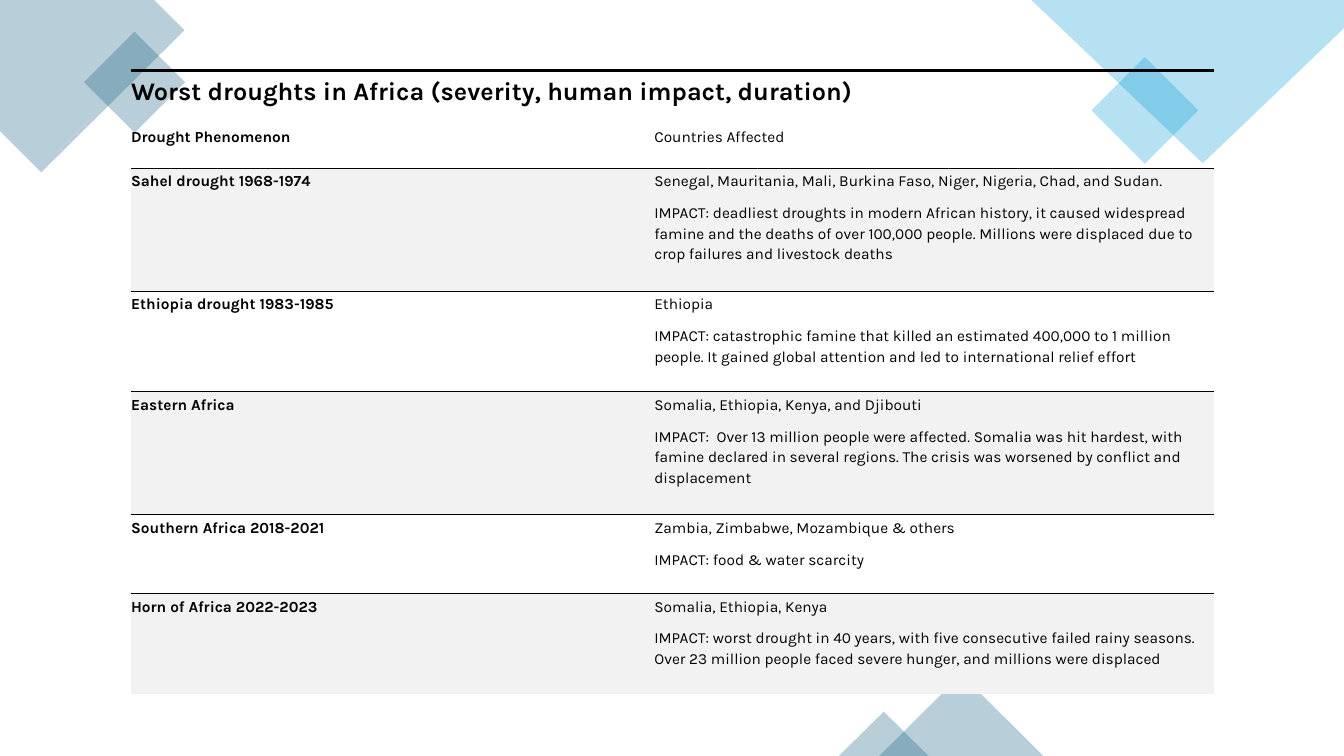
from lxml import etree
from pptx import Presentation
from pptx.dml.color import RGBColor
from pptx.enum.shapes import MSO_SHAPE
from pptx.oxml.ns import qn
from pptx.util import Inches, Pt

# Content
TITLE = "Worst droughts in Africa (severity, human impact, duration)"
HEADINGS = ("Drought Phenomenon", "Countries Affected")
DROUGHTS = [
    ("Sahel drought 1968-1974",
     "Senegal, Mauritania, Mali, Burkina Faso, Niger, Nigeria, Chad, and Sudan.",
     "IMPACT: deadliest droughts in modern African history, it caused widespread famine "
     "and the deaths of over 100,000 people. Millions were displaced due to crop failures "
     "and livestock deaths"),
    ("Ethiopia drought 1983-1985",
     "Ethiopia",
     "IMPACT: catastrophic famine that killed an estimated 400,000 to 1 million people. "
     "It gained global attention and led to international relief effort"),
    ("Eastern Africa",
     "Somalia, Ethiopia, Kenya, and Djibouti",
     "IMPACT:  Over 13 million people were affected. Somalia was hit hardest, with famine "
     "declared in several regions. The crisis was worsened by conflict and displacement"),
    ("Southern Africa 2018-2021",
     "Zambia, Zimbabwe, Mozambique & others",
     "IMPACT: food & water scarcity"),
    ("Horn of Africa 2022-2023",
     "Somalia, Ethiopia, Kenya",
     "IMPACT: worst drought in 40 years, with five consecutive failed rainy seasons. "
     "Over 23 million people faced severe hunger, and millions were displaced"),
]
COLUMN_WIDTHS = (5.19, 5.55)
ROW_HEIGHTS = (0.44, 0.44, 1.22, 1, 1.22, 0.78, 1)

BLACK = RGBColor(0x00, 0x00, 0x00)
BAND = RGBColor(0xF2, 0xF2, 0xF2)
TEAL = RGBColor(0x15, 0x60, 0x82)
SKY = RGBColor(0x0F, 0x9E, 0xD5)
FONT = "Karla"
NO_STYLE_NO_GRID = "{2D5ABB26-0587-4C30-8999-92F81FD0307C}"

# Corner decorations, in inches on the slide
CORNERS = [
    ([(1.53, 0), (0, 0), (0, 1.3), (0.41, 1.71), (1.83, 0.3)], TEAL),
    ([(13.33, 0), (10.23, 0), (11.93, 1.62), (13.33, 0.28)], SKY),
]
ACCENTS = [
    (MSO_SHAPE.RECTANGLE, (0.98, 0.46, 0.71, 0.71), 315, TEAL),
    (MSO_SHAPE.RECTANGLE, (10.98, 0.72, 0.75, 0.75), 315, SKY),
    (MSO_SHAPE.ISOSCELES_TRIANGLE, (8.72, 6.69, 1.63, 0.81), 0, TEAL),
    (MSO_SHAPE.ISOSCELES_TRIANGLE, (8.32, 7.06, 0.89, 0.44), 0, TEAL),
]


def tint(shape, color):
    shape.shadow.inherit = False
    shape.line.fill.background()
    shape.fill.solid()
    shape.fill.fore_color.rgb = color
    srgb = shape.fill._xPr.find(qn("a:solidFill"))[0]
    etree.SubElement(srgb, qn("a:alpha"), val="30000")


def write(cell, lines, bold=False, size=11):
    cell.margin_left, cell.margin_top = Inches(0), Inches(0.02)
    cell.margin_right, cell.margin_bottom = Inches(0.06), Inches(0.17)
    frame = cell.text_frame
    for index, line in enumerate(lines):
        paragraph = frame.paragraphs[0] if index == 0 else frame.add_paragraph()
        paragraph.line_spacing = 1.15
        paragraph.space_after = Pt(8)
        run = paragraph.add_run()
        run.text = line
        run.font.name = FONT
        run.font.size = Pt(size)
        run.font.bold = bold
        run.font.color.rgb = BLACK


def rule_above(cell, points):
    border = etree.Element(qn("a:lnT"), w=str(Pt(points)))
    solid = etree.SubElement(border, qn("a:solidFill"))
    etree.SubElement(solid, qn("a:srgbClr"), val=str(BLACK))
    cell._tc.get_or_add_tcPr().insert(0, border)


def main():
    deck = Presentation()
    deck.slide_width, deck.slide_height = Inches(13.33), Inches(7.5)
    slide = deck.slides.add_slide(deck.slide_layouts[6])

    # Decorations behind the table
    for points, color in CORNERS:
        start, *others = [(Inches(x), Inches(y)) for x, y in points]
        outline = slide.shapes.build_freeform(*start)
        outline.add_line_segments(others, close=True)
        tint(outline.convert_to_shape(), color)
    for preset, box, angle, color in ACCENTS:
        accent = slide.shapes.add_shape(preset, *map(Inches, box))
        accent.rotation = angle
        tint(accent, color)

    # Drought table
    table = slide.shapes.add_table(
        len(ROW_HEIGHTS), len(COLUMN_WIDTHS), Inches(1.3), Inches(0.7),
        Inches(sum(COLUMN_WIDTHS)), Inches(sum(ROW_HEIGHTS))).table
    table.first_row = table.horz_banding = False
    table._tbl.tblPr.find(qn("a:tableStyleId")).text = NO_STYLE_NO_GRID
    for column, width in zip(table.columns, COLUMN_WIDTHS):
        column.width = Inches(width)
    for row, height in zip(table.rows, ROW_HEIGHTS):
        row.height = Inches(height)
    for cell in table.iter_cells():
        cell.fill.background()

    # Title and headings
    for cell in table.rows[0].cells:
        rule_above(cell, 2.25)
    table.cell(0, 0).merge(table.cell(0, 1))
    write(table.cell(0, 0), [TITLE], bold=True, size=18)
    for column, heading in enumerate(HEADINGS):
        write(table.cell(1, column), [heading], bold=column == 0)

    # One row per drought, every other one shaded and ruled
    for index, (drought, countries, impact) in enumerate(DROUGHTS):
        cells = table.rows[index + 2].cells
        write(cells[0], [drought], bold=True)
        write(cells[1], [countries, impact])
        if index % 2 == 0:
            for cell in cells:
                cell.fill.solid()
                cell.fill.fore_color.rgb = BAND
                rule_above(cell, 0.5)

    deck.save("out.pptx")


if __name__ == "__main__":
    main()
